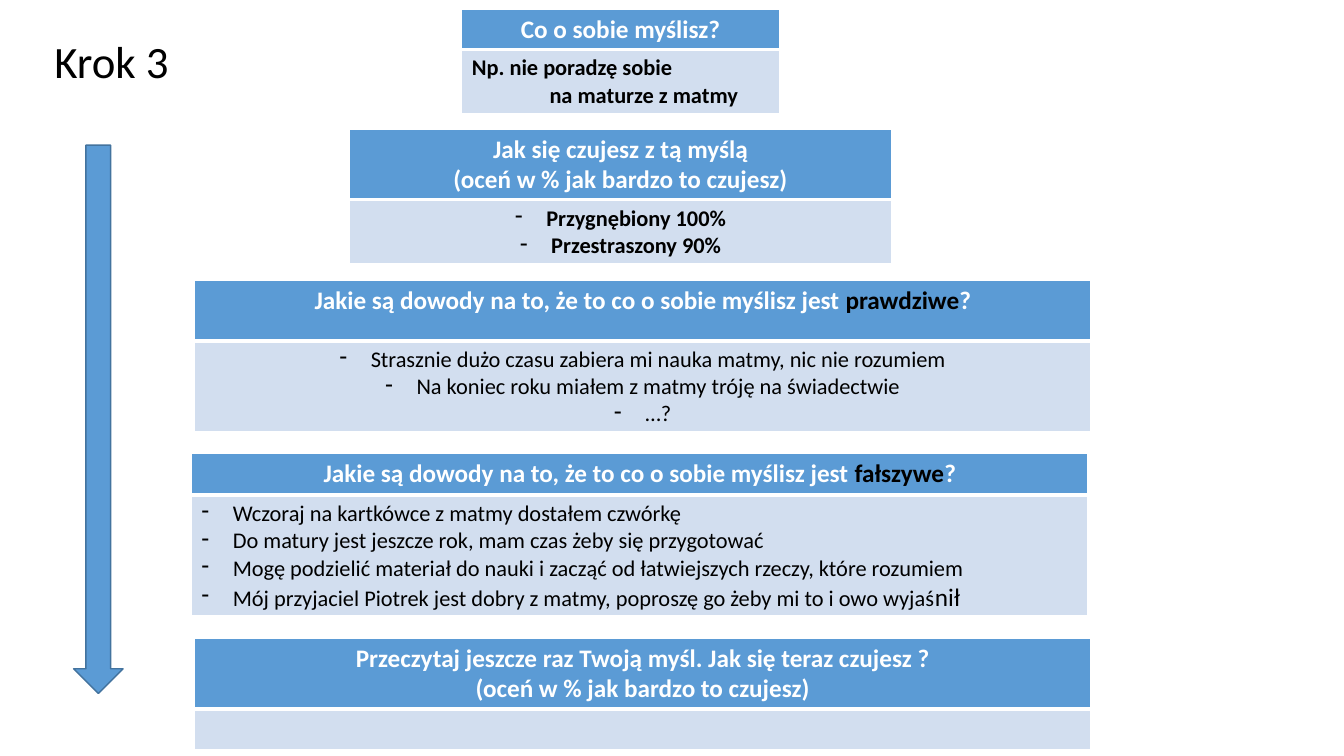
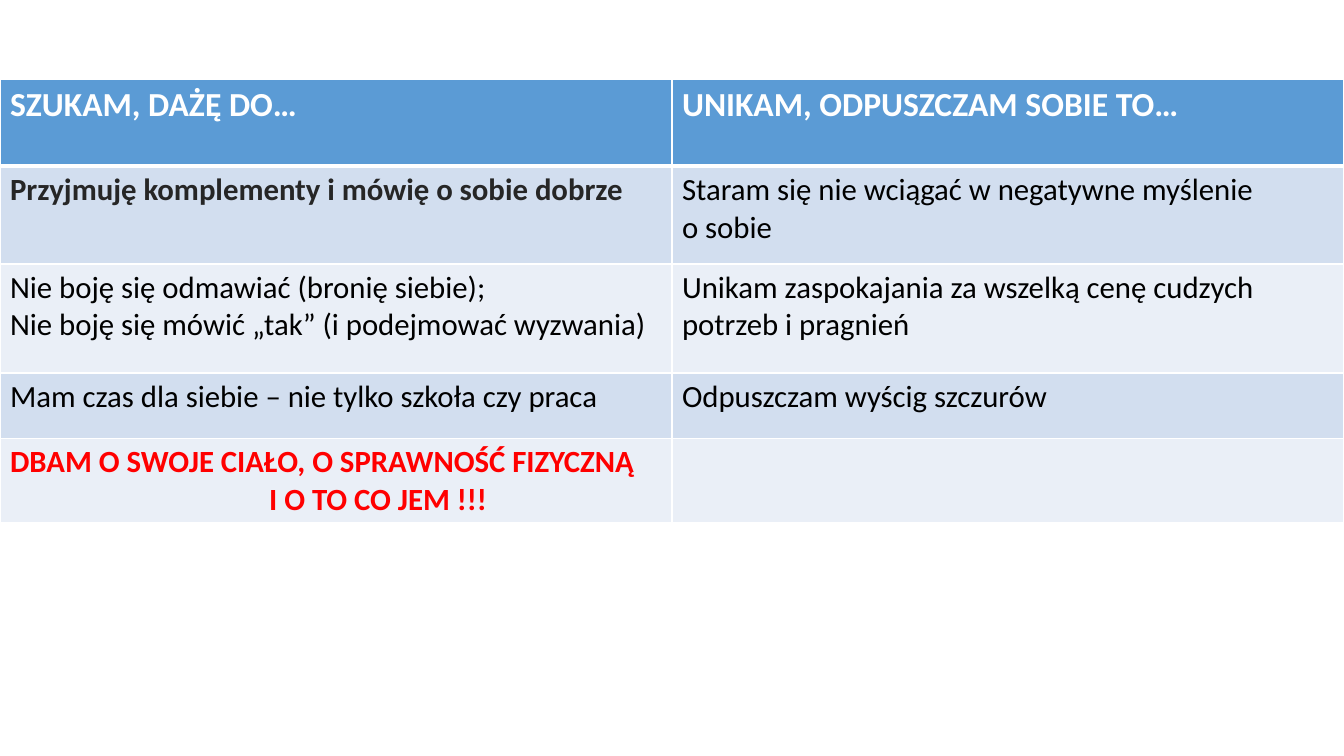
"""Build two slides: a thought-checking worksheet and a table of habits to seek and avoid."""
from dataclasses import dataclass

from lxml import etree
from pptx import Presentation
from pptx.dml.color import RGBColor
from pptx.enum.shapes import MSO_SHAPE
from pptx.enum.text import MSO_AUTO_SIZE, PP_ALIGN
from pptx.oxml.ns import qn
from pptx.util import Emu, Pt

LEFT, CENTER = PP_ALIGN.LEFT, PP_ALIGN.CENTER
DOWN_ARROW = MSO_SHAPE.DOWN_ARROW
FIT_SHAPE = MSO_AUTO_SIZE.SHAPE_TO_FIT_TEXT
PX = 9144
BREAK = "\n"


@dataclass(frozen=True)
class Theme:
    font: str = "Calibri"
    black: str = "000000"
    white: str = "FFFFFF"
    blue: str = "5B9BD5"
    outline: str = "43739E"
    bands: tuple = ("D2DEEF", "EAEFF7")
    charcoal: str = "262626"
    red: str = "FF0000"
    title: int = 32
    step_head: int = 18
    step_body: int = 16
    habit_head: int = 24
    habit_body: int = 22
    thin: int = 1
    thick: int = 3
    hanging: int = 31


THEME = Theme()
SLIDE_SIZE = (1333, 750)

TITLE = "Krok 3"
TITLE_AREA = (44, 29, 162, 64)
ARROW_AREA = (73, 144, 49, 544)

EVIDENCE = "Jakie są dowody na to, że to co o sobie myślisz jest "
RATING = "(oceń w % jak bardzo to czujesz)"
EMPHASIS = {"color": THEME.black}

STEPS = [
    {"corner": (458, 9), "width": 315, "rows": (38, 64),
     "head": ["Co o sobie myślisz?"],
     "body": ["Np. nie poradzę sobie", "na maturze z matmy"],
     "style": {"bold": True, "indents": (0, 77)}},
    {"corner": (347, 128), "width": 537, "rows": (70, 63),
     "head": ["Jak się czujesz z tą myślą", RATING],
     "body": ["Przygnębiony 100%", "Przestraszony 90%"],
     "style": {"bold": True, "align": CENTER, "bullet": "-"}},
    {"corner": (193, 278), "width": 889, "rows": (60, 90),
     "head": [[EVIDENCE, ("prawdziwe", EMPHASIS), "?"]],
     "body": ["Strasznie dużo czasu zabiera mi nauka matmy, nic nie rozumiem",
              "Na koniec roku miałem z matmy tróję na świadectwie",
              "…?"],
     "style": {"align": CENTER, "bullet": "-"}},
    {"corner": (190, 450), "width": 889, "rows": (41, 120),
     "head": [[EVIDENCE, ("fałszywe", EMPHASIS), "?"]],
     "body": ["Wczoraj na kartkówce z matmy dostałem czwórkę",
              "Do matury jest jeszcze rok, mam czas żeby się przygotować",
              "Mogę podzielić materiał do nauki i zacząć od łatwiejszych rzeczy, które rozumiem",
              ["Mój przyjaciel Piotrek jest dobry z matmy, poproszę go żeby mi to i owo wyjaś",
               ("nił", {"size": THEME.step_head})]],
     "style": {"bullet": "-"}},
    {"corner": (193, 633), "width": 889, "rows": (70, 41),
     "head": ["Przeczytaj jeszcze raz Twoją myśl. Jak się teraz czujesz ?", RATING],
     "body": [], "style": {}},
]

HABITS_CORNER = (0, 79)
HABITS_ROWS = (86, 97, 108, 65, 83)
HABITS_HEAD = ["SZUKAM, DAŻĘ DO…", "UNIKAM, ODPUSZCZAM SOBIE TO…"]
HABITS = [
    ((["Przyjmuję komplementy i mówię o sobie dobrze"],
      {"bold": True, "color": THEME.charcoal}),
     ([["Staram się nie wciągać w negatywne myślenie", BREAK, "o sobie"]], {})),
    ((["Nie boję się odmawiać (bronię siebie);",
       "Nie boję się mówić „tak” (i podejmować wyzwania)"], {}),
     (["Unikam zaspokajania za wszelką cenę cudzych potrzeb i pragnień"], {})),
    ((["Mam czas dla siebie – nie tylko szkoła czy praca"], {}),
     (["Odpuszczam wyścig szczurów"], {})),
    ((["DBAM O SWOJE CIAŁO, O SPRAWNOŚĆ FIZYCZNĄ", "I O TO CO JEM !!!"],
      {"bold": True, "color": THEME.red, "indents": (0, 257)}),
     ([], {})),
]


def px(*lengths):
    return [Emu(length * PX) for length in lengths]


def rgb(color):
    return RGBColor.from_string(color)


def write(frame, lines, size, color=THEME.black, bold=False, align=LEFT,
          bullet=None, indents=()):
    for index, line in enumerate(lines):
        para = frame.add_paragraph() if index else frame.paragraphs[0]
        para.alignment = align
        properties = para._p.get_or_add_pPr()
        if bullet:
            hanging = THEME.hanging * PX
            properties.set("marL", str(hanging))
            properties.set("indent", str(-hanging))
            etree.SubElement(properties, qn("a:buChar"), char=bullet)
        elif indents:
            properties.set("marL", str(indents[index] * PX))
        for part in [line] if isinstance(line, str) else line:
            if part == BREAK:
                para.add_line_break()
                continue
            text, changes = (part, {}) if isinstance(part, str) else part
            span = para.add_run()
            span.text = text
            span.font.name = THEME.font
            span.font.size = Pt(changes.get("size", size))
            span.font.bold = bold
            span.font.color.rgb = rgb(changes.get("color", color))


def add_border(cell, bottom):
    properties = cell._tc.get_or_add_tcPr()
    for side in ("lnL", "lnR", "lnT", "lnB"):
        width = bottom if side == "lnB" else THEME.thin
        line = etree.SubElement(properties, qn(f"a:{side}"), w=str(Pt(width)))
        fill = etree.SubElement(line, qn("a:solidFill"))
        etree.SubElement(fill, qn("a:srgbClr"), val=THEME.white)


def add_grid(page, corner, widths, heights, head, body, head_size, body_size):
    area = px(*corner, sum(widths), sum(heights))
    table = page.shapes.add_table(len(heights), len(widths), *area).table
    for column, width in zip(table.columns, px(*widths)):
        column.width = width
    for row, height in zip(table.rows, px(*heights)):
        row.height = height
    for row_index, contents in enumerate([head, *body]):
        is_head = row_index == 0
        band = THEME.bands[(row_index - 1) % len(THEME.bands)]
        for column_index, (lines, style) in enumerate(contents):
            cell = table.cell(row_index, column_index)
            add_border(cell, THEME.thick if is_head else THEME.thin)
            cell.fill.solid()
            cell.fill.fore_color.rgb = rgb(THEME.blue if is_head else band)
            write(cell.text_frame, lines, head_size if is_head else body_size, **style)


def build_steps(page):
    title = page.shapes.add_textbox(*px(*TITLE_AREA)).text_frame
    title.word_wrap = True
    title.auto_size = FIT_SHAPE
    write(title, [TITLE], THEME.title)
    head_style = {"color": THEME.white, "bold": True, "align": CENTER}
    for step in STEPS:
        add_grid(page, step["corner"], [step["width"]], step["rows"],
                 [(step["head"], head_style)], [[(step["body"], step["style"])]],
                 THEME.step_head, THEME.step_body)
    arrow = page.shapes.add_shape(DOWN_ARROW, *px(*ARROW_AREA))
    arrow.shadow.inherit = False
    arrow.fill.solid()
    arrow.fill.fore_color.rgb = rgb(THEME.blue)
    arrow.line.color.rgb = rgb(THEME.outline)
    arrow.line.width = Pt(THEME.thin)


def build_habits(page):
    head_style = {"color": THEME.white, "bold": True}
    column_width = SLIDE_SIZE[0] / len(HABITS_HEAD)
    add_grid(page, HABITS_CORNER, [column_width] * len(HABITS_HEAD), HABITS_ROWS,
             [([text], head_style) for text in HABITS_HEAD], HABITS,
             THEME.habit_head, THEME.habit_body)


def main():
    deck = Presentation()
    deck.slide_width, deck.slide_height = px(*SLIDE_SIZE)
    blank = deck.slide_layouts[6]
    for build in (build_steps, build_habits):
        build(deck.slides.add_slide(blank))
    deck.save("out.pptx")


if __name__ == "__main__":
    main()
